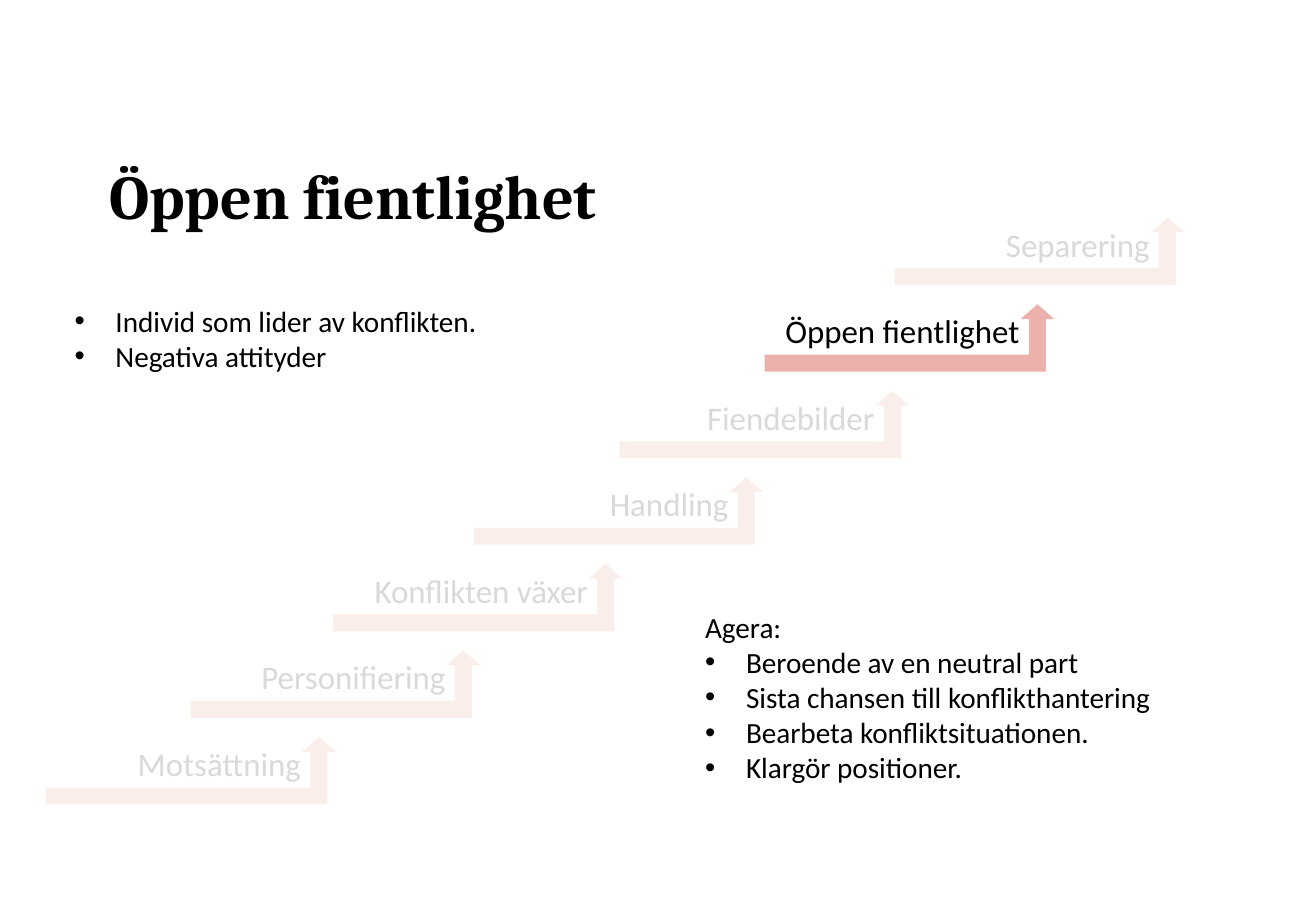
import dataclasses

import lxml.etree
import pptx
import pptx.dml.color
import pptx.enum.shapes
import pptx.enum.text
import pptx.oxml.ns
import pptx.util

Cm = pptx.util.Cm
Pt = pptx.util.Pt
RGB = pptx.dml.color.RGBColor.from_string
Align = pptx.enum.text.PP_ALIGN
Anchor = pptx.enum.text.MSO_ANCHOR
AutoSize = pptx.enum.text.MSO_AUTO_SIZE
CM_PER_INCH = 2.54


@dataclasses.dataclass(frozen=True)
class Theme:
    ink: str = "000000"
    faded_ink: str = "D9D9D9"
    arrow: str = "EAB1AD"
    faded_arrow: str = "F9EEE9"
    heading_font: str = "Cambria"
    body_font: str = "Calibri"
    bullet_font: str = "Arial"
    heading_size: int = 34
    step_size: int = 18
    body_size: int = 16


def apply(target, values):
    for name, value in values.items():
        setattr(target, name, value)


class ConflictSlide:
    """Draws the parts of a conflict staircase slide in one theme."""

    def __init__(self, slide, theme):
        self.slide = slide
        self.theme = theme

    def text(self, box, lines, size, color, frame=None, paragraph=None, font=None):
        text_frame = self.slide.shapes.add_textbox(*map(Cm, box)).text_frame
        apply(text_frame, {"word_wrap": True, **(frame or {})})
        paragraphs = []
        for index, line in enumerate(lines):
            entry = text_frame.add_paragraph() if index else text_frame.paragraphs[0]
            apply(entry, paragraph or {})
            run = entry.add_run()
            run.text = line
            apply(run.font, {"name": self.theme.body_font, "size": Pt(size), **(font or {})})
            run.font.color.rgb = RGB(color)
            paragraphs.append(entry)
        return paragraphs

    def heading(self, box, title):
        margins = ("margin_left", "margin_top", "margin_right", "margin_bottom")
        self.text(
            box, [title], self.theme.heading_size, self.theme.ink,
            frame={"vertical_anchor": Anchor.MIDDLE, **dict.fromkeys(margins, 0)},
            paragraph={"line_spacing": 0.9},
            font={"name": self.theme.heading_font, "bold": True},
        )

    def bullets(self, box, items, intro=None):
        lines = ([intro] if intro else []) + items
        paragraphs = self.text(
            box, lines, self.theme.body_size, self.theme.ink,
            frame={"auto_size": AutoSize.SHAPE_TO_FIT_TEXT},
        )
        marks = {
            "a:buFont": ("typeface", self.theme.bullet_font),
            "a:buChar": ("char", "•"),
        }
        for item in paragraphs[-len(items):]:
            properties = item._p.get_or_add_pPr()
            properties.set("marL", str(Cm(0.79)))
            properties.set("indent", str(-Cm(0.79)))
            for tag, (name, value) in marks.items():
                lxml.etree.SubElement(properties, pptx.oxml.ns.qn(tag)).set(name, value)

    def step(self, left, top, stage, active):
        theme = self.theme
        self.text(
            (left - 0.39, top, 5.31, 1.02), [stage], theme.step_size,
            theme.ink if active else theme.faded_ink,
            frame={"margin_right": 0, "auto_size": AutoSize.SHAPE_TO_FIT_TEXT},
            paragraph={"alignment": Align.RIGHT},
        )
        arrow = self.slide.shapes.add_shape(
            pptx.enum.shapes.MSO_SHAPE.BENT_UP_ARROW, *map(Cm, (left, top, 5.59, 1.3))
        )
        arrow.adjustments[2] = 0.22
        arrow.shadow.inherit = False
        arrow.fill.solid()
        arrow.fill.fore_color.rgb = RGB(theme.arrow if active else theme.faded_arrow)
        arrow.line.fill.background()


def main():
    presentation = pptx.Presentation()
    apply(presentation, {
        "slide_width": Cm(10 * CM_PER_INCH),
        "slide_height": Cm(6.95 * CM_PER_INCH),
    })
    slide = presentation.slides.add_slide(presentation.slide_layouts[6])
    conflict = ConflictSlide(slide, Theme())

    current_stage = "Öppen fientlighet"
    conflict.heading((2.11, 2.13, 11.94, 3.43), current_stage)

    stages = {
        "Motsättning": 0.89,
        "Personifiering": 3.68,
        "Konflikten växer": 6.43,
        "Handling": 9.14,
        "Fiendebilder": 11.96,
        current_stage: 14.76,
        "Separering": 17.27,
    }
    bottom_step, rise = 14.22, 1.67
    for level, (stage, left) in enumerate(stages.items()):
        conflict.step(left, bottom_step - level * rise, stage, stage == current_stage)

    conflict.bullets(
        (1.19, 5.72, 9.7, 1.63),
        ["Individ som lider av konflikten.", "Negativa attityder"],
    )
    conflict.bullets(
        (13.36, 11.63, 11, 3.68),
        [
            "Beroende av en neutral part",
            "Sista chansen till konflikthantering",
            "Bearbeta konfliktsituationen.",
            "Klargör positioner.",
        ],
        intro="Agera:",
    )
    presentation.save("out.pptx")


if __name__ == "__main__":
    main()
